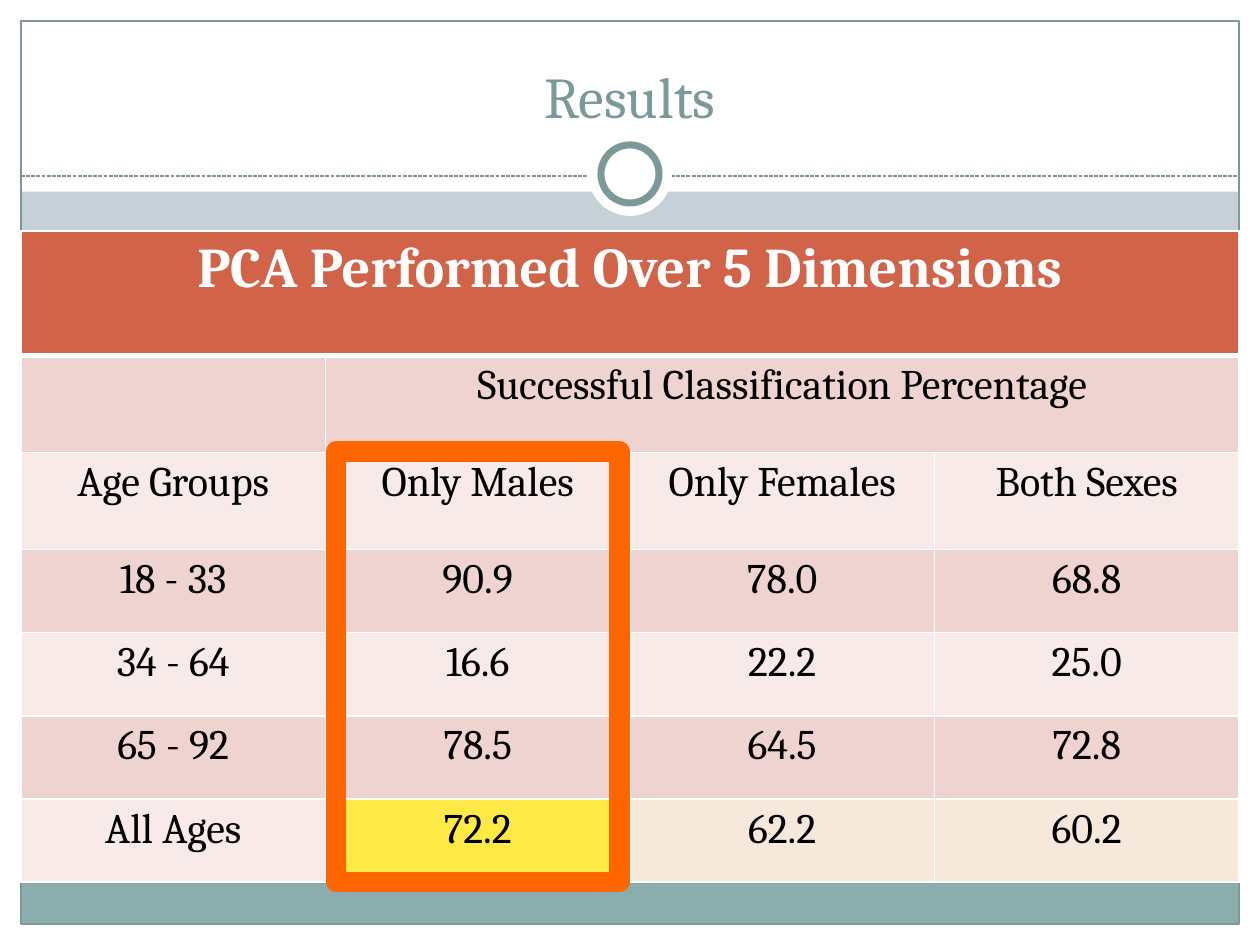
from dataclasses import dataclass

from lxml.etree import SubElement
from pptx import Presentation
from pptx.dml.color import RGBColor
from pptx.enum.dml import MSO_LINE
from pptx.enum.shapes import MSO_CONNECTOR, MSO_SHAPE
from pptx.enum.text import MSO_ANCHOR, PP_ALIGN
from pptx.oxml import parse_xml
from pptx.oxml.ns import nsdecls, qn
from pptx.util import Pt


@dataclass(frozen=True)
class Theme:
    font: str = "Cambria"
    back: str = "C5D1D7"
    white: str = "FFFFFF"
    black: str = "000000"
    teal: str = "7C999A"
    foot: str = "8CADAE"
    head: str = "D16349"
    dark: str = "EED3D0"
    light: str = "F7EAE9"
    cream: str = "F6E9DB"
    gold: str = "FFE947"
    mark: str = "FF6600"
    title: int = 33
    top: int = 32
    body: int = 24


theme = Theme()


def draw(kind, box, fill=None, line=None, width=0.75):
    shape = slide.shapes.add_shape(kind, *map(Pt, box))
    shape.shadow.inherit = False
    if fill:
        shape.fill.solid()
        shape.fill.fore_color.rgb = RGBColor.from_string(fill)
    else:
        shape.fill.background()
    if line:
        shape.line.color.rgb = RGBColor.from_string(line)
        shape.line.width = Pt(width)
    else:
        shape.line.fill.background()
    return shape


def write(frame, text, size, color, bold=False):
    frame.text = text
    par = frame.paragraphs[0]
    par.alignment = PP_ALIGN.CENTER
    for run in par.runs:
        run.font.name = theme.font
        run.font.size = Pt(size)
        run.font.bold = bold
        run.font.color.rgb = RGBColor.from_string(color)


deck = Presentation()
deck.slide_width, deck.slide_height = Pt(720), Pt(540)
slide = deck.slides.add_slide(deck.slide_layouts[5])
slide.background.fill.solid()
slide.background.fill.fore_color.rgb = RGBColor.from_string(theme.back)

for box, fill in [
    ((0, 528, 720, 12), theme.white),
    ((0, 0, 720, 109.5), theme.white),
    ((0, 0, 12, 540), theme.white),
    ((708, 0, 12, 540), theme.white),
    ((12, 503.5, 696, 24.5), theme.foot),
]:
    draw(MSO_SHAPE.RECTANGLE, box, fill)
draw(MSO_SHAPE.RECTANGLE, (12, 12, 696, 516), line=theme.teal)

rule = slide.shapes.add_connector(
    MSO_CONNECTOR.STRAIGHT, Pt(12), Pt(100.6), Pt(708), Pt(100.6))
rule.line.color.rgb = RGBColor.from_string(theme.teal)
rule.line.width = Pt(0.75)
rule.line.dash_style = MSO_LINE.SQUARE_DOT
SubElement(rule._element.spPr, qn("a:effectLst"))

draw(MSO_SHAPE.OVAL, (336, 75.4, 48, 48), theme.white)
draw(MSO_SHAPE.OVAL, (343.4, 82.8, 33.2, 33.2), theme.white, theme.teal, 4)

title = slide.shapes.title
title.left, title.top, title.width, title.height = map(Pt, (24, 18, 672, 60))
title.text_frame.vertical_anchor = MSO_ANCHOR.BOTTOM
write(title.text_frame, "Results", theme.title, theme.teal)
slide.shapes._spTree.append(title._element)

rows = [
    ["PCA Performed Over 5 Dimensions", "", "", ""],
    ["", "Successful Classification Percentage", "", ""],
    ["Age Groups", "Only Males", "Only Females", "Both Sexes"],
    ["18 - 33", "90.9", "78.0", "68.8"],
    ["34 - 64", "16.6", "22.2", "25.0"],
    ["65 - 92", "78.5", "64.5", "72.8"],
    ["All Ages", "72.2", "62.2", "60.2"],
]
highs = [71.3, 55.4, 55.4] + [47.5] * 4
tints = {(6, 1): theme.gold, (6, 2): theme.cream, (6, 3): theme.cream}
grid = slide.shapes.add_table(
    len(rows), 4, Pt(12), Pt(132), Pt(696), Pt(sum(highs))).table
for col in grid.columns:
    col.width = Pt(174)
for r, (row, high) in enumerate(zip(rows, highs)):
    grid.rows[r].height = Pt(high)
    for c, text in enumerate(row):
        cell = grid.cell(r, c)
        if r == 0:
            write(cell.text_frame, text, theme.top, theme.white, True)
        else:
            write(cell.text_frame, text, theme.body, theme.black)
        band = theme.head if r == 0 else theme.dark if r % 2 else theme.light
        cell.fill.solid()
        cell.fill.fore_color.rgb = RGBColor.from_string(tints.get((r, c), band))
        edges = {"L": 1, "R": 1, "T": 3 if r == 1 else 1, "B": 3 if r == 0 else 1}
        for spot, (side, width) in enumerate(edges.items()):
            cell._tc.get_or_add_tcPr().insert(spot, parse_xml(
                f'<a:ln{side} {nsdecls("a")} w="{Pt(width)}"><a:solidFill>'
                f'<a:srgbClr val="{theme.white}"/></a:solidFill></a:ln{side}>'))
grid.cell(0, 0).merge(grid.cell(0, 3))
grid.cell(1, 1).merge(grid.cell(1, 3))

frame = draw(MSO_SHAPE.RECTANGLE, (192, 258, 162, 246), line=theme.mark, width=11.5)
SubElement(frame.line._get_or_add_ln(), qn("a:round"))

deck.save("out.pptx")
